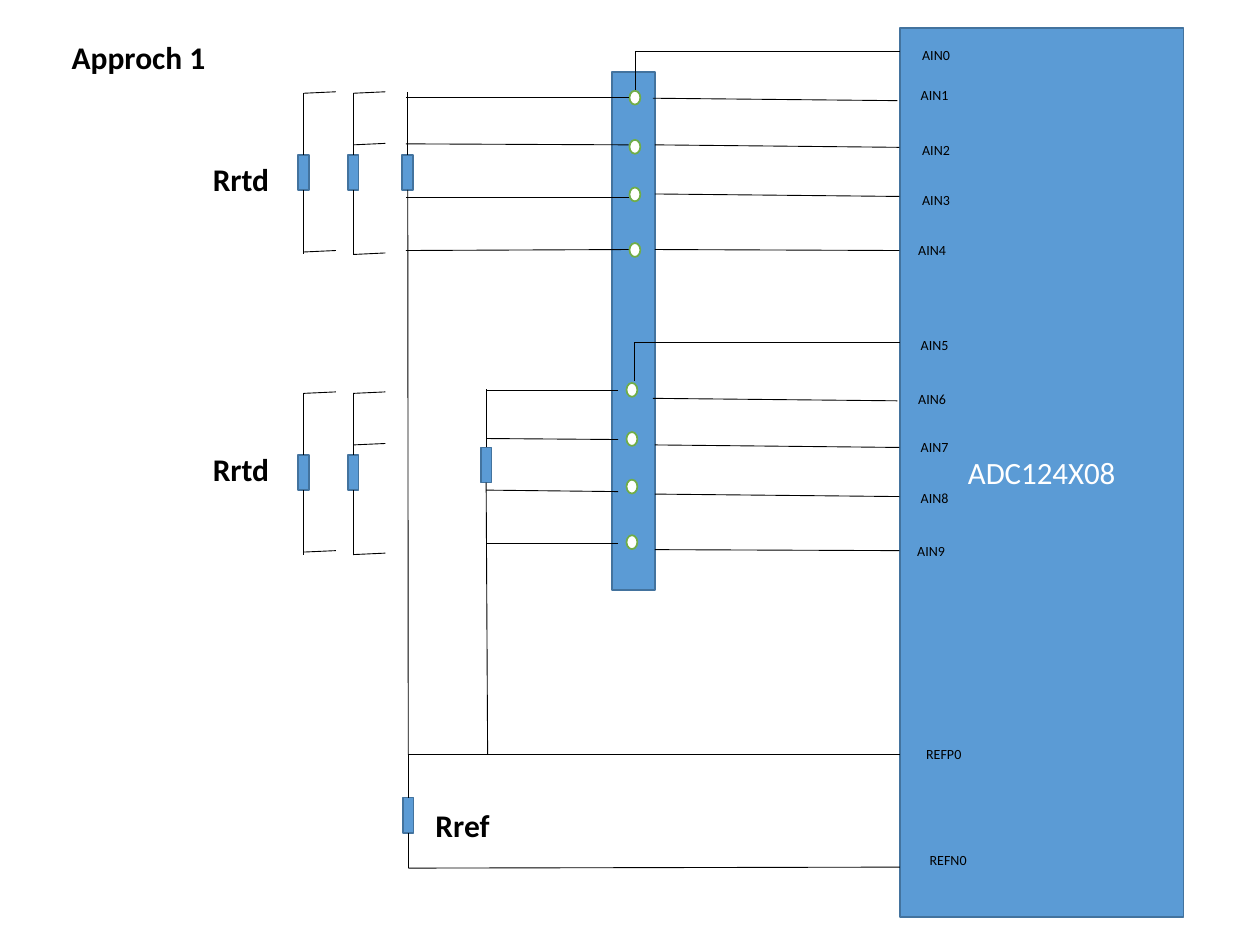
import pptx
import pptx.util
import pptx.dml.color
import pptx.enum.shapes
import pptx.enum.text
import pptx.oxml
import pptx.oxml.ns

Cm, Pt = pptx.util.Cm, pptx.util.Pt
rgb = pptx.dml.color.RGBColor.from_string
MSO = pptx.enum.shapes.MSO_SHAPE

prs = pptx.Presentation()
prs.slide_width, prs.slide_height = Cm(25.4), Cm(19.05)
s = prs.slides.add_slide(prs.slide_layouts[5])


def box(kind, x, y, w, h, fill="5B9BD5", line="43739E"):
    sp = s.shapes.add_shape(kind, Cm(x), Cm(y), Cm(w), Cm(h))
    sp.shadow.inherit = False
    sp.fill.solid()
    sp.fill.fore_color.rgb = rgb(fill)
    sp.line.color.rgb = rgb(line)
    sp.line.width = Pt(1)
    return sp


def wire(x1, y1, x2, y2):
    c = s.shapes.add_connector(pptx.enum.shapes.MSO_CONNECTOR.STRAIGHT,
                               Cm(x1), Cm(y1), Cm(x2), Cm(y2))
    c.line.color.rgb = rgb("000000")
    c.line.width = Pt(0.5)
    c._element.spPr.append(pptx.oxml.parse_xml(
        "<a:effectLst %s/>" % pptx.oxml.ns.nsdecls("a")))
    return c


# Converter chip and terminal block
chip = box(MSO.RECTANGLE, 18.14, 0.56, 5.72, 17.93)
tf = chip.text_frame
tf.text = "ADC124X08"
tf.vertical_anchor = pptx.enum.text.MSO_ANCHOR.MIDDLE
p = tf.paragraphs[0]
p.alignment = pptx.enum.text.PP_ALIGN.CENTER
r = p.runs[0]
r.font.size, r.font.name = Pt(17.7), "Calibri"
r.font.color.rgb = rgb("FFFFFF")
box(MSO.RECTANGLE, 12.34, 1.45, 0.86, 10.44)

# Terminals, four per sensor
for x, dy in ((12.8, 0), (12.74, 5.89)):
    for y in (1.97, 2.96, 3.92, 5.04):
        box(MSO.OVAL, x - 0.11, y + dy - 0.14, 0.22, 0.28, "FFFFFF", "70AD47")

# Terminal block to chip inputs
for dy in (0, 6.05):
    for x, y1, y2 in ((13.16, 1.98, 2.03), (13.2, 2.92, 2.97),
                      (13.2, 3.91, 3.96), (13.2, 5.03, 5.05)):
        wire(x, y1 + dy, x + 4.93, y2 + dy)

# Excitation outputs above each group
for x, y in ((12.8, 1.04), (12.78, 6.91)):
    wire(x, y, 18.14, y)
    wire(x, y, x, y + 0.77)

# Sensors to terminal block
for x1, x2, levels in (
        (12.67, 8.18, ((1.96, 1.96), (2.92, 2.9), (3.99, 3.99), (5.03, 5.05))),
        (12.46, 9.8, ((7.87, 7.87), (8.86, 8.84), (9.91, 9.88), (10.95, 10.95)))):
    for y1, y2 in levels:
        wire(x1, y1, x2, y2)

# Reference lines
wire(8.23, 15.21, 18.14, 15.21)
wire(8.23, 17.5, 18.14, 17.48)

# Resistors: centre, top, end of upper lead, end of lower lead (x, y)
resistors = [(8.22, 3.12, 1.85, 8.23, 15.21),
             (9.8, 9.02, 7.85, 9.83, 15.21),
             (8.23, 16.08, 15.21, 8.23, 17.5)]
for dy in (0, 6.05):
    for x in (6.12, 7.12):
        resistors.append((x, 3.12 + dy, 1.87 + dy, x, 5.13 + dy))
    # Open stubs of the two-wire and three-wire sensors
    for x, y in ((6.12, 1.88), (6.12, 5.08),
                 (7.12, 1.88), (7.12, 2.92), (7.12, 5.13)):
        wire(x, y + dy, x + 0.65, y + dy - 0.03)
for x, top, y_up, x_down, y_down in resistors:
    sp = box(MSO.RECTANGLE, x - 0.11, top, 0.22, 0.71)
    wire(x, top, x, y_up).begin_connect(sp, 0)
    wire(x, top + 0.71, x_down, y_down).begin_connect(sp, 2)

# Title, pin names and resistor names
pins = [("AIN0", 18.34, 0.81), ("AIN1", 18.31, 1.63), ("AIN2", 18.34, 2.72),
        ("AIN3", 18.34, 3.73), ("AIN4", 18.26, 4.75), ("AIN5", 18.31, 6.65),
        ("AIN6", 18.26, 7.75), ("AIN7", 18.31, 8.71), ("AIN8", 18.31, 9.75),
        ("AIN9", 18.24, 10.82), ("REFP0", 18.42, 14.91), ("REFN0", 18.49, 17.04)]
labels = [(text, x, y, 1.57, 0.58, 8, False) for text, x, y in pins]
labels += [("Rrtd", 4.04, 3.1, 1.98, 1.02, 18, True),
           ("Rrtd", 4.04, 8.94, 1.98, 1.02, 18, True),
           ("Rref", 8.53, 16.13, 2.13, 1.02, 18, True),
           ("Approch 1", 1.19, 0.64, 6.02, 1.02, 18, True)]
for text, x, y, w, h, size, bold in labels:
    if text == "Approch 1":
        sp = s.shapes.title
        sp.left, sp.top, sp.width, sp.height = Cm(x), Cm(y), Cm(w), Cm(h)
    else:
        sp = s.shapes.add_textbox(Cm(x), Cm(y), Cm(w), Cm(h))
    tf = sp.text_frame
    tf.text = text
    tf.word_wrap = True
    tf.auto_size = pptx.enum.text.MSO_AUTO_SIZE.SHAPE_TO_FIT_TEXT
    tf.vertical_anchor = pptx.enum.text.MSO_ANCHOR.TOP
    p = tf.paragraphs[0]
    p.alignment = pptx.enum.text.PP_ALIGN.LEFT
    r = p.runs[0]
    r.font.size, r.font.name, r.font.bold = Pt(size), "Calibri", bold
    r.font.color.rgb = rgb("000000")

prs.save("out.pptx")
